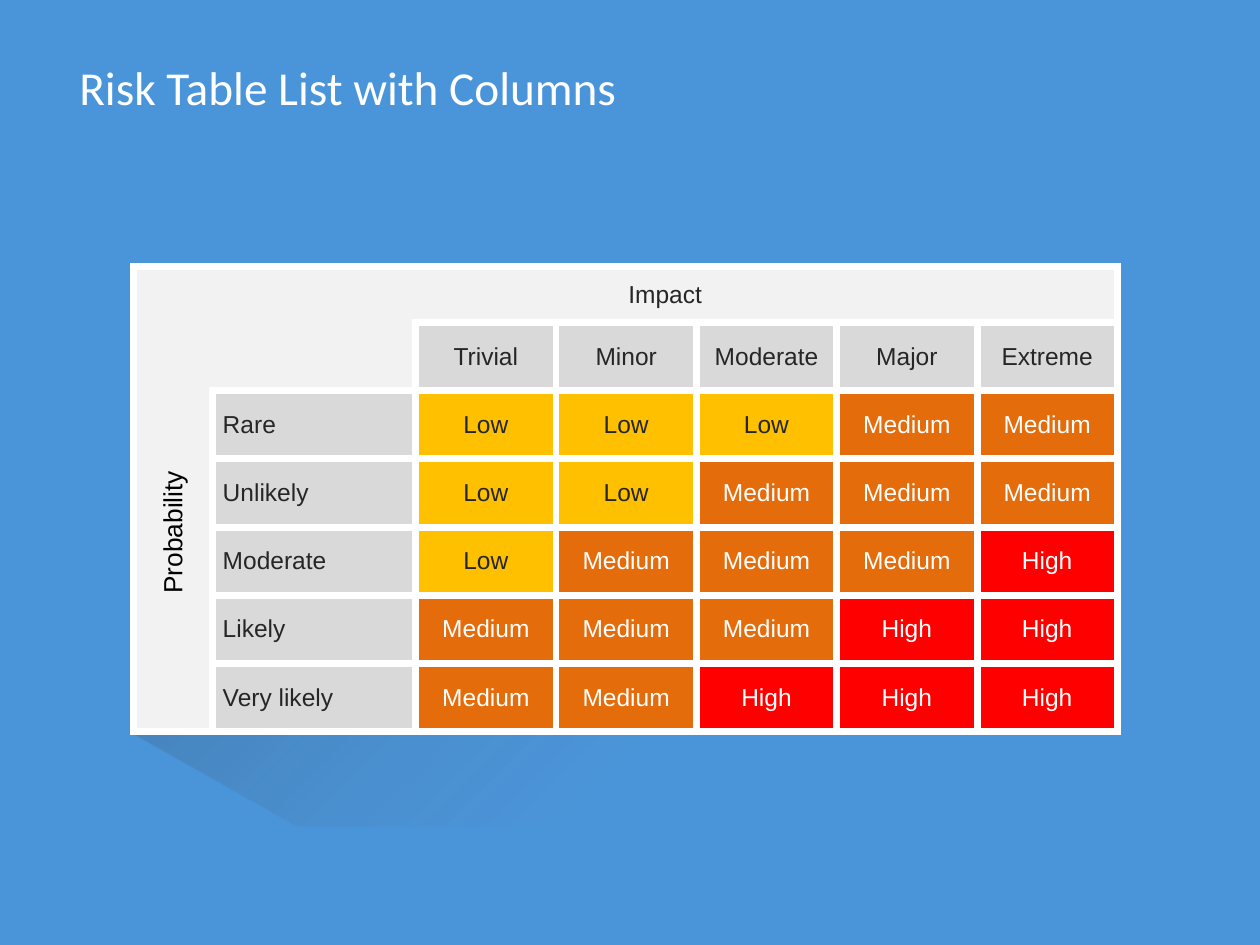
from pptx import Presentation
from pptx.dml.color import RGBColor
from pptx.enum.text import MSO_ANCHOR as Anchor, MSO_AUTO_SIZE as AutoSize, PP_ALIGN as Align
from pptx.oxml.ns import qn
from pptx.util import Cm, Pt
from lxml.etree import SubElement

BLUE = RGBColor(0x4A, 0x95, 0xDA)
WHITE = RGBColor(0xFF, 0xFF, 0xFF)
BLACK = RGBColor(0x00, 0x00, 0x00)
INK = RGBColor(0x26, 0x26, 0x26)
ASH = RGBColor(0x6B, 0x6B, 0x6B)
PALE = RGBColor(0xF2, 0xF2, 0xF2)
GREY = RGBColor(0xD9, 0xD9, 0xD9)
AMBER = RGBColor(0xFF, 0xC0, 0x00)
ORANGE = RGBColor(0xE4, 0x6C, 0x0A)
RED = RGBColor(0xFF, 0x00, 0x00)

IMPACTS = ["Trivial", "Minor", "Moderate", "Major", "Extreme"]
LIKELIHOODS = ["Rare", "Unlikely", "Moderate", "Likely", "Very likely"]
NO_STYLE = "{2D5ABB26-0587-4C30-8999-92F81FD0307C}"


def style_para(para, text, font, size, color, align=Align.LEFT):
    """Write one evenly formatted paragraph."""
    para.text = text
    para.alignment = align
    para.font.name, para.font.size = font, Pt(size)
    para.font.color.rgb = color


def add_label(page, text, left, top, width, height, font, size, color):
    """Add a text box and return it."""
    box = page.shapes.add_textbox(Cm(left), Cm(top), Cm(width), Cm(height))
    style_para(box.text_frame.paragraphs[0], text, font, size, color)
    return box


def add_title(page, left, top, width, height):
    """Add the slide heading, centred vertically in its box."""
    frame = add_label(page, "Risk Table List with Columns", left, top, width, height,
                      "Calibri", 27, WHITE).text_frame
    frame.word_wrap = True
    frame.vertical_anchor = Anchor.MIDDLE
    frame.margin_left = frame.margin_right = Cm(0.33)
    frame.margin_top = frame.margin_bottom = Cm(0.17)


def add_cast_shadow(page, left, top, width, height):
    """Draw the fading shadow that falls below the table."""
    outline = [(0, 9.32), (3.35, 11.22), (width, height), (width, 2.82), (19.84, 0), (17.17, 9.19)]
    points = [(Cm(left + x), Cm(top + y)) for x, y in outline]
    builder = page.shapes.build_freeform(*points[0])
    builder.add_line_segments(points[1:], close=True)
    shadow = builder.convert_to_shape()
    shadow.shadow.inherit = False
    shadow.line.fill.background()
    shadow.fill.gradient()
    shadow.fill.gradient_angle = 315
    stops = zip(shadow.fill.gradient_stops, (BLACK, ASH), (0, 0.59))
    for stop, color, position in stops:
        stop.color.rgb, stop.position = color, position
    for tone, alpha in zip(shadow._element.spPr.iter(qn("a:srgbClr")), (30000, 0)):
        SubElement(tone, qn("a:alpha"), val=str(alpha))


def style_cell(cell, fill, sides="LRTB", text="", color=INK, align=Align.CENTER):
    """Give a cell its white borders, fill and text."""
    for side in sides:
        edge = SubElement(cell._tc.get_or_add_tcPr(), qn(f"a:ln{side}"), w=str(Pt(4.5)))
        SubElement(SubElement(edge, qn("a:solidFill")), qn("a:srgbClr"), val=str(WHITE))
    cell.fill.solid()
    cell.fill.fore_color.rgb = fill
    cell.vertical_anchor = Anchor.MIDDLE
    cell.margin_left = cell.margin_right = Cm(0.2)
    cell.margin_top = cell.margin_bottom = Cm(0.1)
    style_para(cell.text_frame.paragraphs[0], text, "Arial", 14, color, align)


def rate_risk(likelihood, impact):
    """Return the level, fill and text colour for a pair of ranks."""
    score = likelihood + impact
    if score < 3:
        return "Low", AMBER, INK
    return ("Medium", ORANGE, WHITE) if score < 6 else ("High", RED, WHITE)


def add_risk_table(page, left, top, width, height):
    """Add the matrix of likelihood against impact."""
    frame = page.shapes.add_table(len(LIKELIHOODS) + 2, len(IMPACTS) + 2,
                                  Cm(left), Cm(top), Cm(width), Cm(height))
    table = frame.table
    table._tbl.tblPr.find(qn("a:tableStyleId")).text = NO_STYLE
    table.first_row = table.horz_banding = False
    side_width, name_width, head_height = 1.6, 4.09, 1.12
    level_width = (width - side_width - name_width) / len(IMPACTS)
    row_height = (height - head_height) / (len(LIKELIHOODS) + 1)
    for column, size in zip(table.columns, [side_width, name_width] + [level_width] * len(IMPACTS)):
        column.width = Cm(size)
    for row, size in zip(table.rows, [head_height] + [row_height] * (len(LIKELIHOODS) + 1)):
        row.height = Cm(size)

    table.cell(0, 0).merge(table.cell(len(LIKELIHOODS) + 1, 0))
    table.cell(0, 1).merge(table.cell(0, len(IMPACTS) + 1))
    style_cell(table.cell(0, 0), PALE, "LTB")
    style_cell(table.cell(0, 1), PALE, "RT", "Impact")
    style_cell(table.cell(1, 1), PALE, "RB")
    for x, impact in enumerate(IMPACTS):
        style_cell(table.cell(1, x + 2), GREY, text=impact)
    for y, likelihood in enumerate(LIKELIHOODS):
        style_cell(table.cell(y + 2, 1), GREY, text=likelihood, align=Align.LEFT)
        for x in range(len(IMPACTS)):
            level, fill, color = rate_risk(y, x)
            style_cell(table.cell(y + 2, x + 2), fill, text=level, color=color)


def add_axis_label(page, left, top, width, height):
    """Add the label that reads upwards beside the rows."""
    box = add_label(page, "Probability", left, top, width, height, "Arial", 15, BLACK)
    box.rotation = 270
    box.text_frame.word_wrap = False
    box.text_frame.auto_size = AutoSize.SHAPE_TO_FIT_TEXT


def main():
    """Build the deck and save it."""
    deck = Presentation()
    deck.slide_width, deck.slide_height = Cm(25.4), Cm(19.05)
    page = deck.slides.add_slide(deck.slide_layouts[6])
    page.background.fill.solid()
    page.background.fill.fore_color.rgb = BLUE
    add_cast_shadow(page, 2.64, 5.44, 22.73, 11.3)
    add_title(page, 1.27, 0.76, 22.86, 1.98)
    add_risk_table(page, 2.69, 5.38, 19.84, 9.37)
    add_axis_label(page, 1.96, 10.26, 3.02, 0.89)
    deck.save("out.pptx")


if __name__ == "__main__":
    main()
